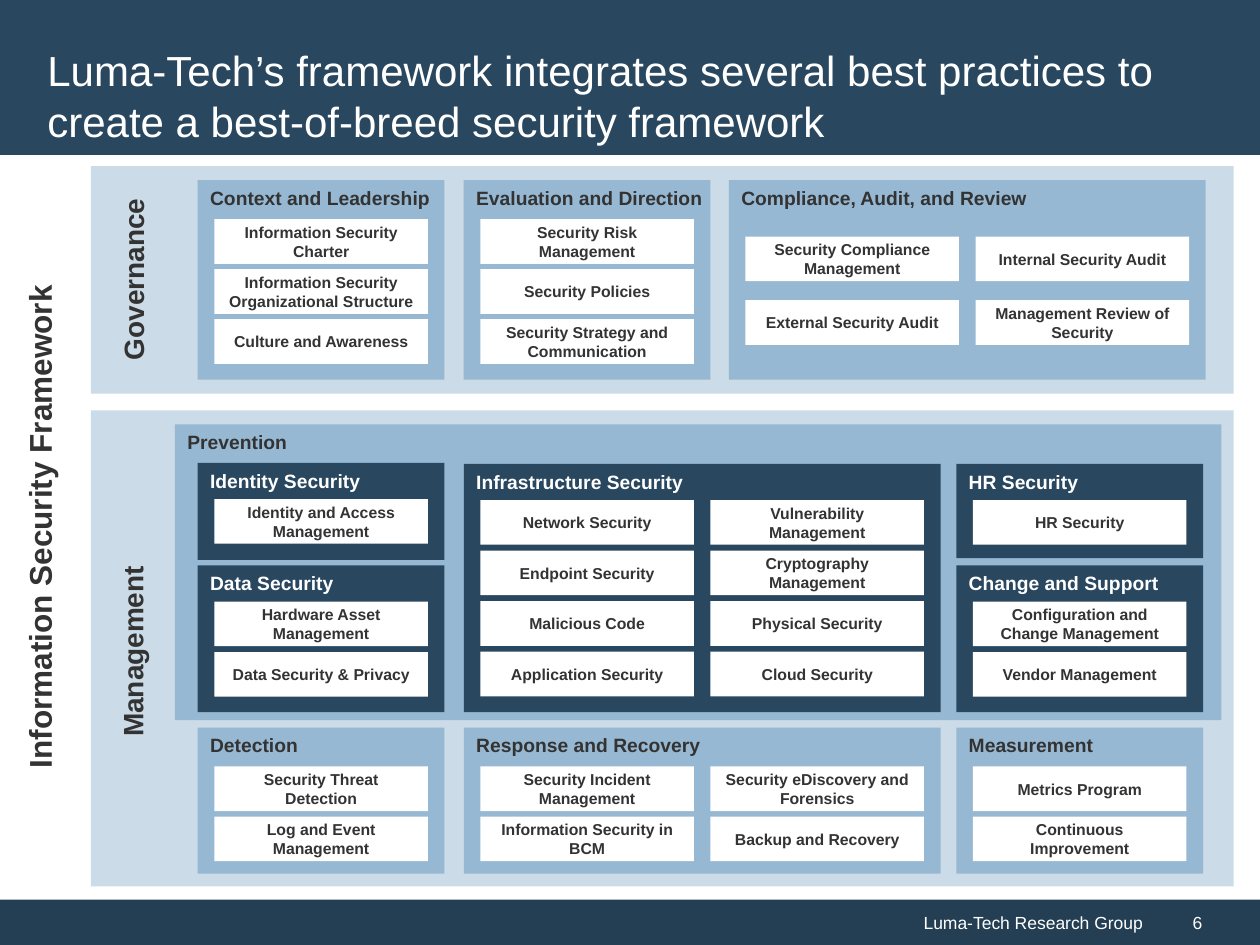
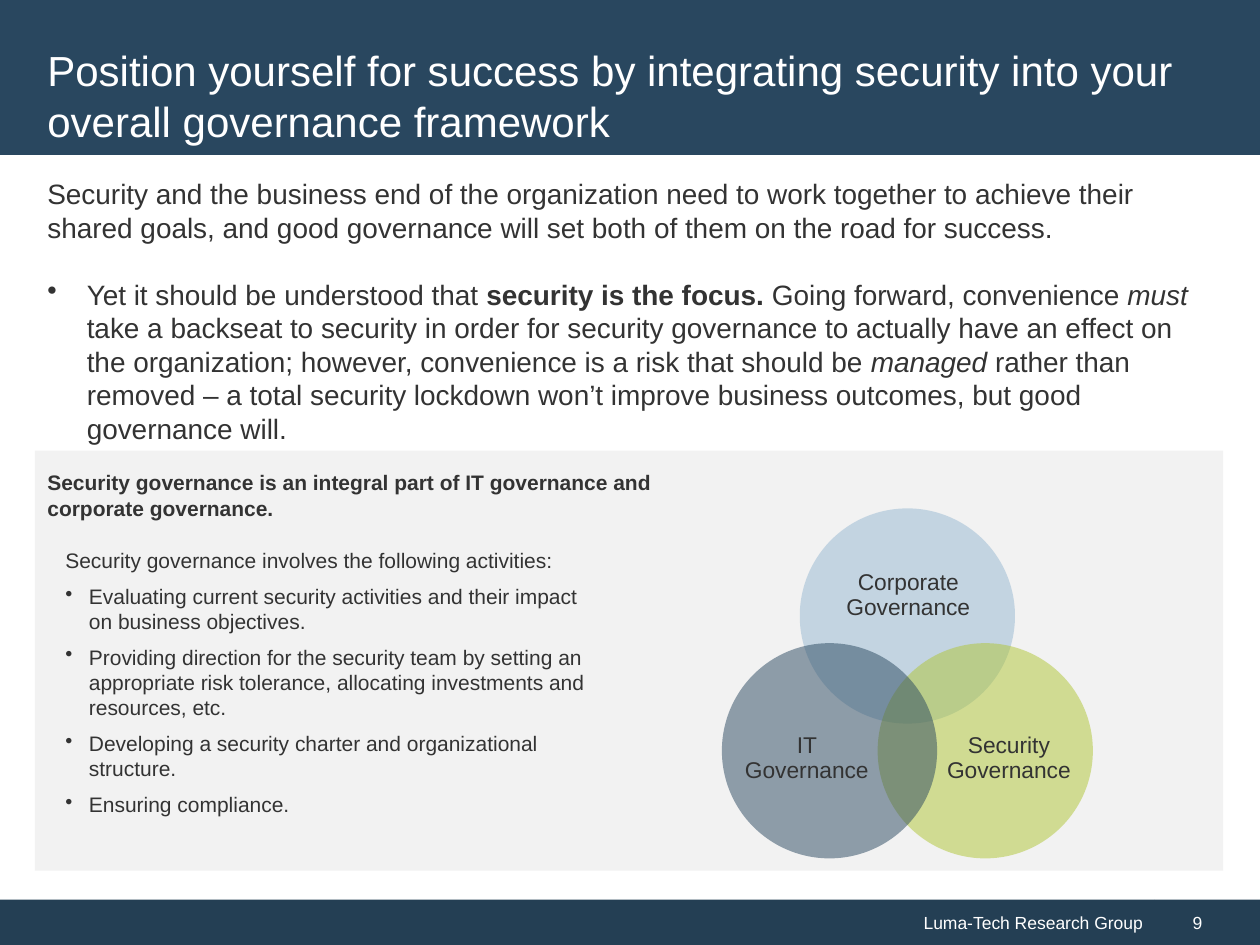
from dataclasses import dataclass
from lxml import etree
from pptx import Presentation
from pptx import util as u
from pptx.dml import color
from pptx.enum import shapes, text
from pptx.oxml import ns


@dataclass(frozen=True)
class Theme:
    face: str = "Arial"
    navy: str = "29475F"
    deep: str = "243F54"
    sky: str = "96B8D2"
    pale: str = "CBDBE7"
    lime: str = "B0C534"
    grey: str = "F2F2F2"
    white: str = "FFFFFF"
    ink: str = "333333"
    title: int = 24
    side: int = 18
    lead: int = 16
    ring: int = 13
    body: int = 12
    head: int = 11
    foot: int = 10
    item: int = 9


T = Theme()
RECT = shapes.MSO_SHAPE.RECTANGLE
OVAL = shapes.MSO_SHAPE.OVAL
LEFT, MID, RIGHT = text.PP_ALIGN.LEFT, text.PP_ALIGN.CENTER, text.PP_ALIGN.RIGHT
TOP, HALF = text.MSO_ANCHOR.TOP, text.MSO_ANCHOR.MIDDLE


def add(slide, spot, fill=None, kind=RECT):
    spot = [u.Pt(n) for n in spot]
    if fill is None:
        return slide.shapes.add_textbox(*spot)
    shape = slide.shapes.add_shape(kind, *spot)
    shape.shadow.inherit = False
    shape.fill.solid()
    shape.fill.fore_color.rgb = color.RGBColor.from_string(fill)
    shape.line.fill.background()
    return shape


def write(shape, paras, size, hue=T.ink, bold=False, align=LEFT, anchor=HALF,
          pad=(7.2, 3.6, 7.2, 3.6), gap=0, hang=0, lead=None):
    frame = shape.text_frame
    frame.word_wrap = True
    frame.vertical_anchor = anchor
    (frame.margin_left, frame.margin_top,
     frame.margin_right, frame.margin_bottom) = [u.Pt(n) for n in pad]
    for k, runs in enumerate(paras):
        para = frame.add_paragraph() if k else frame.paragraphs[0]
        para.alignment = align
        para.space_after = u.Pt(gap)
        if lead:
            para.line_spacing = lead
        if hang and k:
            props = para._p.get_or_add_pPr()
            props.set("marL", str(u.Pt(hang)))
            props.set("indent", str(-u.Pt(hang)))
            etree.SubElement(props, ns.qn("a:buChar")).set("char", "•")
        font = para.font
        font.name, font.size, font.bold = T.face, u.Pt(size), bold
        font.color.rgb = color.RGBColor.from_string(hue)
        for words, mark in [(runs, "")] if isinstance(runs, str) else runs:
            run = para.add_run()
            run.text = words
            if mark == "b":
                run.font.bold = True
            if mark == "i":
                run.font.italic = True


deck = Presentation()
deck.slide_width, deck.slide_height = u.Pt(720), u.Pt(540)

pages = [
    ("6", "Luma-Tech’s framework integrates several best practices to "
          "create a best-of-breed security framework"),
    ("9", "Position yourself for success by integrating security into your "
          "overall governance framework"),
]
slides = []
for page, title in pages:
    slide = deck.slides.add_slide(deck.slide_layouts[6])
    write(add(slide, (0, 514, 660, 26), T.deep), ["Luma-Tech Research Group"],
          T.foot, T.white, align=RIGHT)
    write(add(slide, (660, 514, 60, 26), T.deep), [page],
          T.foot, T.white, pad=(21.5, 3.6, 7.2, 3.6))
    add(slide, (0, 0, 720, 88.5), T.navy)
    write(add(slide, (20, 20, 679, 69)), [title], T.title, T.white)
    slides.append(slide)
frame, venn = slides

add(frame, (52, 95, 653, 130), T.pale)
add(frame, (52, 234.5, 653, 272), T.pale)
sides = [
    ("Information Security Framework", (-183.5, 286.5, 412, 29), T.side),
    ("Governance", (13, 136, 126, 47.5), T.lead),
    ("Management", (-57.5, 348.5, 266, 47.5), T.lead),
]
for label, spot, size in sides:
    side = add(frame, spot)
    side.rotation = 270
    write(side, [label], size, bold=True, align=MID)

write(add(frame, (100, 242.5, 598, 169), T.sky), ["Prevention"], T.head,
      bold=True, anchor=TOP)

wide, tall, inset, step = 122, 25.5, 9.5, 131.5
cols = [113, 265, 416.5, 546.5]
gov = (T.sky, T.ink, 22.25, 28.6)
audit = (T.sky, T.ink, 32.25, 36.3)
guard = (T.navy, T.white, 20.75, 28.9)
panels = [
    ("Context and Leadership", cols[0], 103, 114, gov,
     [["Information Security Charter", "Information Security Organizational Structure",
       "Culture and Awareness"]]),
    ("Evaluation and Direction", cols[1], 103, 114, gov,
     [["Security Risk Management", "Security Policies",
       "Security Strategy and Communication"]]),
    ("Compliance, Audit, and Review", cols[2], 103, 114, audit,
     [["Security Compliance Management", "External Security Audit"],
      ["Internal Security Audit", "Management Review of Security"]]),
    ("Identity Security", cols[0], 264.5, 55.5, guard,
     [["Identity and Access Management"]]),
    ("Data Security", cols[0], 323, 84, guard,
     [["Hardware Asset Management", "Data Security & Privacy"]]),
    ("Infrastructure Security", cols[1], 265, 142, guard,
     [["Network Security", "Endpoint Security", "Malicious Code",
       "Application Security"],
      ["Vulnerability Management", "Cryptography Management", "Physical Security",
       "Cloud Security"]]),
    ("HR Security", cols[3], 265, 54, guard, [["HR Security"]]),
    ("Change and Support", cols[3], 323, 84, guard,
     [["Configuration and Change Management", "Vendor Management"]]),
    ("Detection", cols[0], 415.75, 83.5, gov,
     [["Security Threat Detection", "Log and Event Management"]]),
    ("Response and Recovery", cols[1], 415.75, 83.5, gov,
     [["Security Incident Management", "Information Security in BCM"],
      ["Security eDiscovery and Forensics", "Backup and Recovery"]]),
    ("Measurement", cols[3], 415.75, 83.5, gov,
     [["Metrics Program", "Continuous Improvement"]]),
]
for label, x, y, high, (fill, hue, drop, pitch), lists in panels:
    span = 2 * inset + wide + step * (len(lists) - 1)
    write(add(frame, (x, y, span, high), fill), [label], T.head, hue,
          bold=True, anchor=TOP, pad=(7.2, 3.6, 0, 3.6))
    for col, items in enumerate(lists):
        for row, item in enumerate(items):
            spot = (x + inset + col * step, y + drop + row * pitch, wide, tall)
            write(add(frame, spot, T.white), [item], T.item, bold=True, align=MID)

add(venn, (20, 257.5, 679, 240), T.grey)
write(add(venn, (20, 97.5, 679, 162.5)), [
    "Security and the business end of the organization need to work together to "
    "achieve their shared goals, and good governance will set both of them on the "
    "road for success.",
    [("Yet it should be understood that ", ""),
     ("security is the focus. ", "b"),
     ("Going forward, convenience ", ""),
     ("must", "i"),
     (" take a backseat to security in order for security governance to actually "
      "have an effect on the organization; however, convenience is a risk that "
      "should be ", ""),
     ("managed", "i"),
     (" rather than removed – a total security lockdown won’t improve business "
      "outcomes, but good governance will.", "")],
], T.lead, anchor=TOP, gap=19, hang=22.5)
write(add(venn, (30.25, 309.5, 312.5, 163)), [
    "Security governance involves the following activities:",
    "Evaluating current security activities and their impact on business objectives.",
    "Providing direction for the security team by setting an appropriate risk "
    "tolerance, allocating investments and resources, etc.",
    "Developing a security charter and organizational structure.",
    "Ensuring compliance.",
], T.body, anchor=TOP, gap=6, hang=13.5)
write(add(venn, (20, 265, 405, 37)),
      ["Security governance is an integral part of IT governance and "
       "corporate governance."], T.body, bold=True, anchor=TOP)

size = 123
rings = [
    ("Corporate Governance", 457, 290.5, T.sky, (474, 312.5, 90, 55.5)),
    ("Security Governance", 501.5, 367.5, T.lime, (539.5, 399.5, 74, 68)),
    ("IT Governance", 412.5, 367.5, T.navy, (424, 399.5, 74, 68)),
]
for label, x, y, fill, spot in rings:
    ring = add(venn, (x, y, size, size), fill, OVAL)
    tint = ring._element.spPr.find(ns.qn("a:solidFill"))[0]
    etree.SubElement(tint, ns.qn("a:alpha")).set("val", "50000")
    write(add(venn, spot), [label], T.ring, align=MID, pad=(0, 0, 0, 0), lead=0.9)

deck.save("out.pptx")
